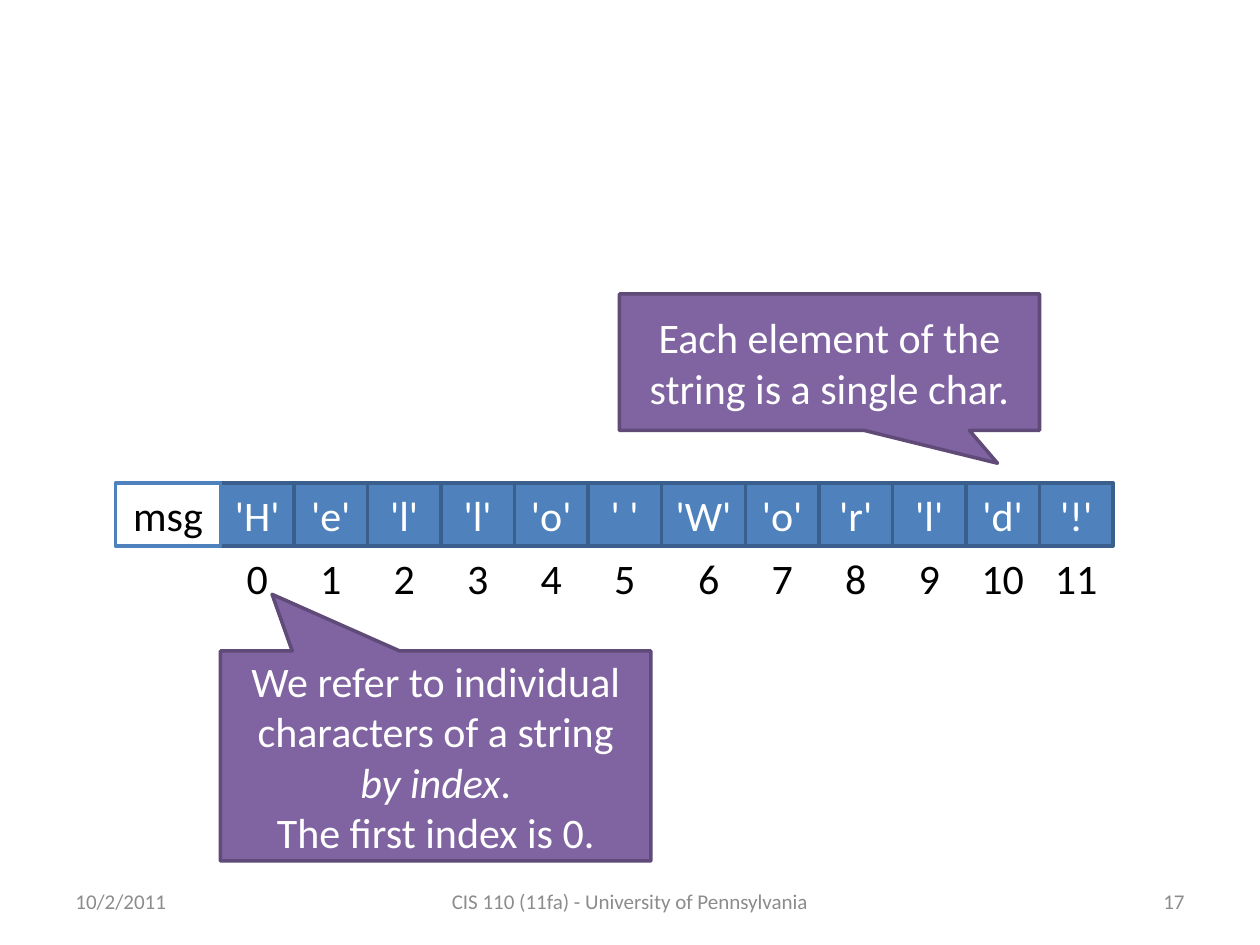
from pptx import Presentation
from pptx.dml.color import RGBColor
from pptx.enum.shapes import MSO_SHAPE
from pptx.enum.text import MSO_ANCHOR, PP_ALIGN
from pptx.util import Pt

RECTANGLE = MSO_SHAPE.RECTANGLE
CALLOUT = MSO_SHAPE.RECTANGULAR_CALLOUT
TOP, MIDDLE = MSO_ANCHOR.TOP, MSO_ANCHOR.MIDDLE
LEFT, CENTER, RIGHT = PP_ALIGN.LEFT, PP_ALIGN.CENTER, PP_ALIGN.RIGHT

EMU_PER_PX = 7620  # 120 px to the inch
FONT = "Calibri"
COLORS = {
    "white": "FFFFFF",
    "black": "000000",
    "footer": "8C8C8C",
    "cell": "4F81BD",
    "cell_line": "3A5F8C",
    "callout": "8064A2",
    "callout_line": "5F4A78",
}


def px(value):
    return round(value * EMU_PER_PX)


def color(name):
    return RGBColor.from_string(COLORS[name])


def write(shape, paragraphs, text_color, size=24, align=CENTER, anchor=MIDDLE):
    """Write paragraphs, each a list of (text, italic) runs."""
    frame = shape.text_frame
    frame.word_wrap = True
    frame.vertical_anchor = anchor
    for index, runs in enumerate(paragraphs):
        paragraph = frame.add_paragraph() if index else frame.paragraphs[0]
        paragraph.alignment = align
        for text, italic in runs:
            run = paragraph.add_run()
            run.text = text
            run.font.name = FONT
            run.font.size = Pt(size)
            run.font.italic = italic
            run.font.color.rgb = color(text_color)


def add_label(slide, box, text, text_color, **style):
    label = slide.shapes.add_textbox(*map(px, box))
    write(label, [[(text, False)]], text_color, **style)


def add_box(slide, kind, box, paragraphs, fill, line, text_color="white"):
    shape = slide.shapes.add_shape(kind, *map(px, box))
    shape.shadow.inherit = False
    shape.fill.solid()
    shape.fill.fore_color.rgb = color(fill)
    shape.line.color.rgb = color(line)
    shape.line.width = Pt(2)
    write(shape, paragraphs, text_color)
    return shape


def add_string_array(slide, box, name, message):
    """Draw the variable name, one cell per character and the indices below."""
    left, top, cell_width, height = box
    name_width, wide_cell_width = 100, 80
    cell_left = left + name_width
    for index, character in enumerate(message):
        width = wide_cell_width if character == "W" else cell_width
        add_box(slide, RECTANGLE, (cell_left, top, width, height),
                [[(f"'{character}'", False)]], "cell", "cell_line")
        cell_left += width
        add_label(slide, (cell_left - cell_width, top + height, cell_width, height),
                  str(index), "black", anchor=TOP)
    add_box(slide, RECTANGLE, (left, top, name_width, height),
            [[(name, False)]], "white", "cell", "black")


def add_callout(slide, box, tip, paragraphs):
    callout = add_box(slide, CALLOUT, box, paragraphs, "callout", "callout_line")
    for index, offset in enumerate(tip):
        callout.adjustments[index] = offset


def add_footer(slide, box):
    left, top, width, height = box
    side_width, center_width = 280, 380
    parts = [
        (left, side_width, "10/2/2011", LEFT),
        (left + (width - center_width) // 2, center_width,
         "CIS 110 (11fa) - University of Pennsylvania", CENTER),
        (left + width - side_width, side_width, "17", RIGHT),
    ]
    for part_left, part_width, text, align in parts:
        add_label(slide, (part_left, top, part_width, height), text, "footer",
                  size=12, align=align)


def main():
    presentation = Presentation()
    presentation.slide_width, presentation.slide_height = px(1200), px(900)
    slide = presentation.slides.add_slide(presentation.slide_layouts[6])

    add_footer(slide, (60, 834, 1080, 48))
    add_string_array(slide, (110, 460, 70, 60), "msg", "Hello World!")

    # Notes on the index and on the elements
    add_callout(slide, (210, 620, 410, 200), (-0.38, -0.77), [
        [("We refer to individual characters of a string ", False),
         ("by index", True), (".", False)],
        [("The first index is 0.", False)],
    ])
    add_callout(slide, (590, 280, 400, 130), (0.4, 0.74), [
        [("Each element of the string is a single char.", False)],
    ])

    presentation.save("out.pptx")


if __name__ == "__main__":
    main()
